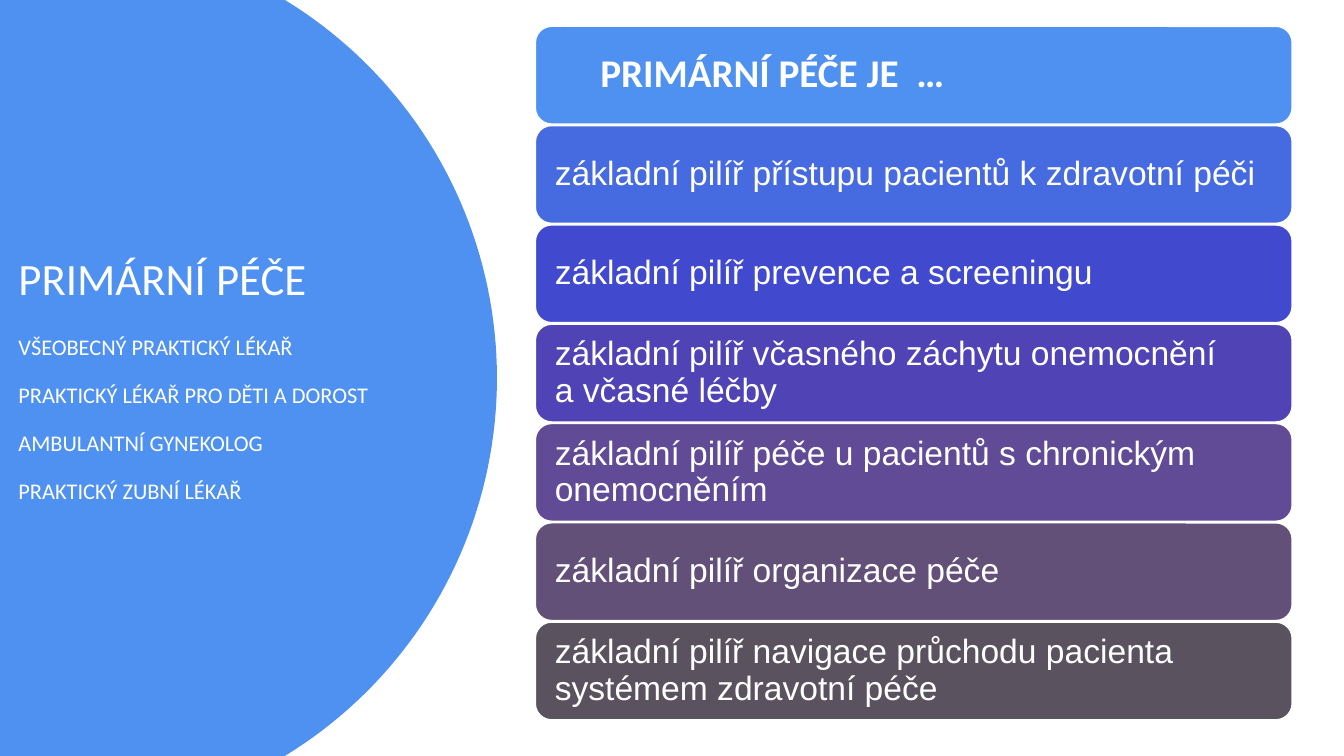
from math import asin, cos, sin

from pptx import Presentation
from pptx.dml.color import RGBColor
from pptx.enum.shapes import MSO_SHAPE
from pptx.enum.text import MSO_ANCHOR, MSO_AUTO_SIZE, PP_ALIGN
from pptx.util import Pt

WHITE = RGBColor(0xFF, 0xFF, 0xFF)
BLUE = RGBColor(0x4E, 0x91, 0xF0)
PILLAR_COLORS = [
    RGBColor(0x46, 0x6B, 0xE0),
    RGBColor(0x41, 0x4A, 0xCE),
    RGBColor(0x50, 0x43, 0xB5),
    RGBColor(0x61, 0x4B, 0x96),
    RGBColor(0x63, 0x50, 0x79),
    RGBColor(0x5B, 0x52, 0x60),
]

HEADING = "PRIMÁRNÍ PÉČE"
PROVIDERS = [
    "VŠEOBECNÝ PRAKTICKÝ LÉKAŘ",
    "PRAKTICKÝ LÉKAŘ PRO DĚTI A DOROST",
    "AMBULANTNÍ GYNEKOLOG",
    "PRAKTICKÝ ZUBNÍ LÉKAŘ",
]
LIST_HEADING = "PRIMÁRNÍ PÉČE JE  …"
PILLARS = [
    "základní pilíř přístupu pacientů k zdravotní péči",
    "základní pilíř prevence a screeningu",
    "základní pilíř včasného záchytu onemocnění\va včasné léčby",
    "základní pilíř péče u pacientů s chronickým onemocněním",
    "základní pilíř organizace péče",
    "základní pilíř navigace průchodu pacienta\vsystémem zdravotní péče",
]


def style_paragraph(p, font, size, bold=False):
    p.alignment = PP_ALIGN.LEFT
    p.line_spacing = 0.9
    for r in p.runs:
        r.font.name = font
        r.font.size = Pt(size)
        r.font.bold = bold
        r.font.color.rgb = WHITE


def add_curved_panel(s, x, y, w, h, straight_w, steps=80):
    half, bulge = h / 2, w - straight_w
    radius = (half ** 2 + bulge ** 2) / (2 * bulge)
    center_x, center_y = x + w - radius, y + half
    sweep = asin(half / radius)
    angles = [sweep * (2 * i / steps - 1) for i in range(steps + 1)]
    arc = [(Pt(center_x + radius * cos(a)), Pt(center_y + radius * sin(a)))
           for a in angles]
    builder = s.shapes.build_freeform(Pt(x), Pt(y))
    builder.add_line_segments(arc + [(Pt(x), Pt(y + h))])
    sp = builder.convert_to_shape()
    sp.shadow.inherit = False
    sp.fill.solid()
    sp.fill.fore_color.rgb = BLUE
    sp.line.fill.background()


def add_title_panel(s, x, y, w, h):
    add_curved_panel(s, x, y, w, h, straight_w=203.5)
    title = s.shapes.title
    title.left, title.top = Pt(x + 6), Pt(y + 53)
    title.width, title.height = Pt(w - 15), Pt(h - 102)
    s.shapes._spTree.append(title._element)
    tf = title.text_frame
    tf.word_wrap = True
    tf.auto_size = MSO_AUTO_SIZE.NONE
    tf.vertical_anchor = MSO_ANCHOR.MIDDLE
    tf.text = "\n".join([HEADING] + PROVIDERS)
    for i, p in enumerate(tf.paragraphs):
        style_paragraph(p, "Calibri", 16 if i else 32)
        p.space_before = Pt((0, 22)[i] if i < 2 else 17)


def add_bar(s, x, y, w, h, text, color, font, size, indent, bold=False):
    sp = s.shapes.add_shape(MSO_SHAPE.ROUNDED_RECTANGLE, Pt(x), Pt(y), Pt(w), Pt(h))
    sp.shadow.inherit = False
    sp.fill.solid()
    sp.fill.fore_color.rgb = color
    sp.line.color.rgb = WHITE
    sp.line.width = Pt(1)
    tf = sp.text_frame
    tf.word_wrap = True
    tf.vertical_anchor = MSO_ANCHOR.MIDDLE
    tf.margin_left, tf.margin_right = Pt(indent), Pt(10)
    tf.text = text
    style_paragraph(tf.paragraphs[0], font, size, bold)


def add_pillar_list(s, x, y, w, h, gap=1.1):
    bar_h = (h - gap * len(PILLARS)) / (len(PILLARS) + 1)
    add_bar(s, x, y, w, bar_h, LIST_HEADING, BLUE, "Calibri", 28, 43, bold=True)
    for i, (text, color) in enumerate(zip(PILLARS, PILLAR_COLORS), 1):
        add_bar(s, x, y + i * (bar_h + gap), w, bar_h, text, color, "Arial", 24, 10.5)


def main():
    prs = Presentation()
    prs.slide_width, prs.slide_height = Pt(960), Pt(540)
    s = prs.slides.add_slide(prs.slide_layouts[5])
    add_title_panel(s, 0, 0, 355, 540)
    add_pillar_list(s, 382.4, 18.8, 540.6, 495.4)
    prs.save("out.pptx")


if __name__ == "__main__":
    main()
